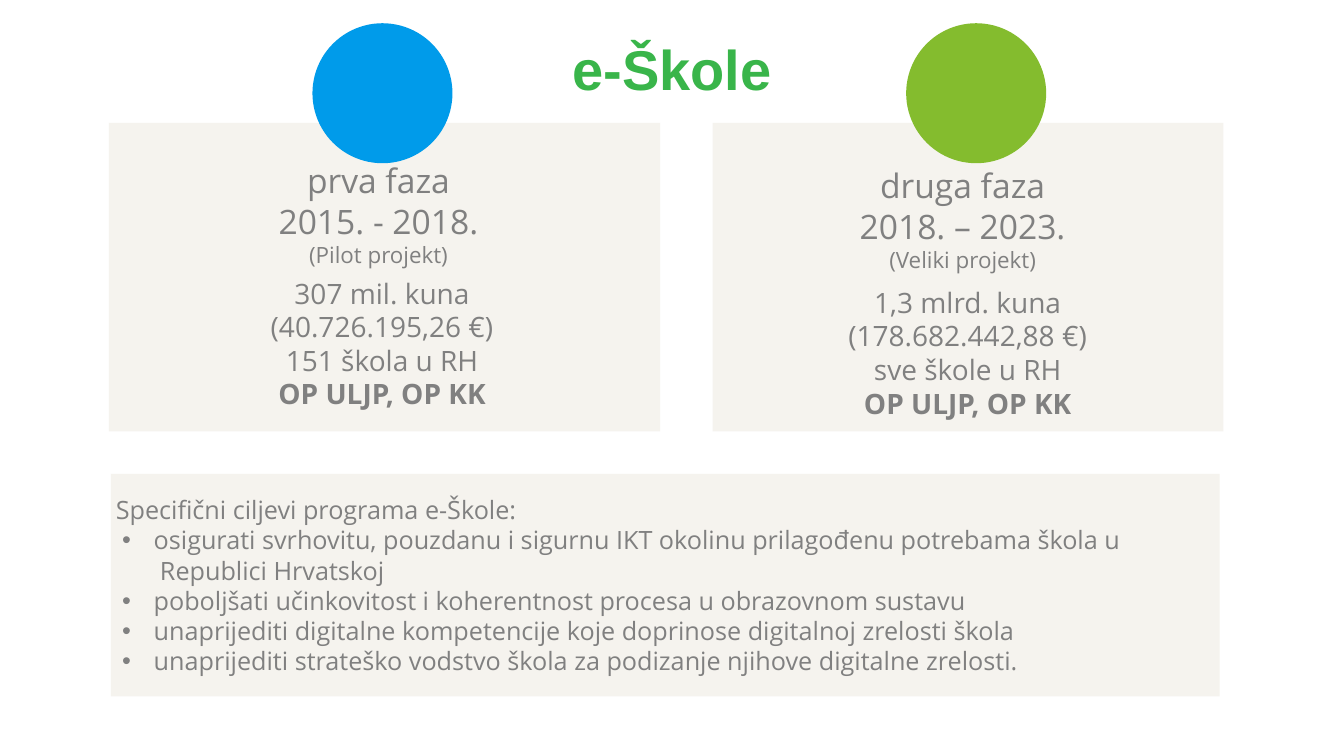
from dataclasses import dataclass

from lxml.etree import SubElement
from pptx import Presentation
from pptx.dml.color import RGBColor
from pptx.enum.shapes import MSO_SHAPE
from pptx.enum.text import MSO_ANCHOR, MSO_AUTO_SIZE, PP_ALIGN
from pptx.oxml.ns import qn
from pptx.shapes.autoshape import Shape
from pptx.slide import Slide
from pptx.text.text import TextFrame
from pptx.util import Pt


@dataclass(frozen=True)
class Theme:
    title_font: str = "Arial"
    body_font: str = "Open Sans"
    title_color: str = "39B54A"
    text_color: str = "808080"
    panel_color: str = "F5F3EE"
    first_phase_color: str = "009BEA"
    second_phase_color: str = "84BC2E"
    title_size: float = 40
    phase_size: float = 24
    figure_size: float = 20
    goal_size: float = 18
    note_size: float = 16


THEME = Theme()


@dataclass(frozen=True)
class Box:
    left: float
    top: float
    width: float
    height: float


@dataclass(frozen=True)
class Line:
    text: str
    size: float
    bold: bool = False
    align: PP_ALIGN = PP_ALIGN.CENTER
    margin: float = 0
    bullet_offset: float = 0


@dataclass(frozen=True)
class Phase:
    color: str
    panel: Box
    circle: Box
    period_box: Box
    period: tuple[str, str, str]
    figures_box: Box
    figures: tuple[str, str, str, str]
    figures_inset: tuple[float, float]


TIGHT_INSET = (3.6, 1.44)
CIRCLE_SIZE = 100

PHASES = (
    Phase(
        THEME.first_phase_color,
        Box(77.8, 87.8, 393.8, 220.3),
        Box(223.2, 16.6, CIRCLE_SIZE, CIRCLE_SIZE),
        Box(97.2, 113, 346.3, 81.4),
        ("prva faza", "2015. - 2018.", "(Pilot projekt)"),
        Box(115.2, 195.8, 315.4, 136.8),
        ("307 mil. kuna", "(40.726.195,26 €)", "151 škola u RH", "OP ULJP, OP KK"),
        TIGHT_INSET,
    ),
    Phase(
        THEME.second_phase_color,
        Box(509, 87.8, 365, 220.3),
        Box(647.3, 16.6, CIRCLE_SIZE, CIRCLE_SIZE),
        Box(526.3, 116.6, 322.6, 81.4),
        ("druga faza", "2018. – 2023.", "(Veliki projekt)"),
        Box(533.5, 200.2, 315.4, 140.4),
        ("1,3 mlrd. kuna", "(178.682.442,88 €)", "sve škole u RH", "OP ULJP, OP KK"),
        (7.2, 3.6),
    ),
)

GOALS_BOX = Box(79.2, 338.4, 792, 159.1)
GOALS_HEADING = "Specifični ciljevi programa e-Škole:"
# Each goal is one bulleted line, with any further lines set under it
GOALS = (
    ("osigurati svrhovitu, pouzdanu i sigurnu IKT okolinu prilagođenu potrebama škola u",
     "Republici Hrvatskoj"),
    ("poboljšati učinkovitost i koherentnost procesa u obrazovnom sustavu",),
    ("unaprijediti digitalne kompetencije koje doprinose digitalnoj zrelosti škola",),
    ("unaprijediti strateško vodstvo škola za podizanje njihove digitalne zrelosti.",),
)


def set_insets(frame: TextFrame, inset: tuple[float, float]) -> None:
    frame.margin_left = frame.margin_right = Pt(inset[0])
    frame.margin_top = frame.margin_bottom = Pt(inset[1])


def write_lines(frame: TextFrame, lines: list[Line], inset: tuple[float, float]) -> None:
    frame.word_wrap = True
    set_insets(frame, inset)
    for number, line in enumerate(lines):
        paragraph = frame.add_paragraph() if number else frame.paragraphs[0]
        paragraph.alignment = line.align
        properties = paragraph._p.get_or_add_pPr()
        if line.margin:
            properties.set("marL", str(Pt(line.margin)))
        if line.bullet_offset:
            properties.set("indent", str(Pt(-line.bullet_offset)))
            SubElement(properties, qn("a:buFont"), typeface=THEME.title_font)
            SubElement(properties, qn("a:buChar"), char="•")
        run = paragraph.add_run()
        run.text = line.text
        run.font.name = THEME.body_font
        run.font.size = Pt(line.size)
        run.font.bold = line.bold
        run.font.color.rgb = RGBColor.from_string(THEME.text_color)


def add_filled(slide: Slide, kind: MSO_SHAPE, box: Box, color: str) -> Shape:
    filled = slide.shapes.add_shape(
        kind, Pt(box.left), Pt(box.top), Pt(box.width), Pt(box.height))
    filled.shadow.inherit = False
    filled.fill.solid()
    filled.fill.fore_color.rgb = RGBColor.from_string(color)
    filled.line.fill.background()
    return filled


def add_text(slide: Slide, box: Box, lines: list[Line], inset: tuple[float, float]) -> None:
    frame = slide.shapes.add_textbox(
        Pt(box.left), Pt(box.top), Pt(box.width), Pt(box.height)).text_frame
    write_lines(frame, lines, inset)
    frame.auto_size = MSO_AUTO_SIZE.SHAPE_TO_FIT_TEXT


def add_title(slide: Slide) -> None:
    title = slide.shapes.title
    title.left, title.top, title.width, title.height = Pt(43.2), Pt(24.5), Pt(873.4), Pt(54.7)
    frame = title.text_frame
    frame.auto_size = MSO_AUTO_SIZE.NONE
    frame.vertical_anchor = MSO_ANCHOR.MIDDLE
    set_insets(frame, TIGHT_INSET)
    paragraph = frame.paragraphs[0]
    paragraph.alignment = PP_ALIGN.CENTER
    paragraph.line_spacing = 0.9
    run = paragraph.add_run()
    run.text = "e-Škole"
    run.font.name = THEME.title_font
    run.font.size = Pt(THEME.title_size)
    run.font.bold = True
    run.font.color.rgb = RGBColor.from_string(THEME.title_color)


def add_phase(slide: Slide, phase: Phase) -> None:
    add_filled(slide, MSO_SHAPE.RECTANGLE, phase.panel, THEME.panel_color)
    name, years, note = phase.period
    period = [Line(name, THEME.phase_size), Line(years, THEME.phase_size),
              Line(note, THEME.note_size)]
    add_text(slide, phase.period_box, period, TIGHT_INSET)
    *figures, programmes = phase.figures
    figure_lines = [Line(figure, THEME.figure_size) for figure in figures]
    figure_lines.append(Line(programmes, THEME.figure_size, bold=True))
    add_text(slide, phase.figures_box, figure_lines, phase.figures_inset)
    add_filled(slide, MSO_SHAPE.OVAL, phase.circle, phase.color)


def add_goals(slide: Slide) -> None:
    panel = add_filled(slide, MSO_SHAPE.RECTANGLE, GOALS_BOX, THEME.panel_color)
    lines = [Line(GOALS_HEADING, THEME.goal_size, align=PP_ALIGN.LEFT)]
    for first, *rest in GOALS:
        lines.append(Line(first, THEME.goal_size, align=PP_ALIGN.LEFT,
                          margin=27, bullet_offset=22.5))
        lines += [Line(text, THEME.goal_size, align=PP_ALIGN.LEFT, margin=31.5)
                  for text in rest]
    panel.text_frame.vertical_anchor = MSO_ANCHOR.MIDDLE
    write_lines(panel.text_frame, lines, TIGHT_INSET)


def main() -> None:
    presentation = Presentation()
    presentation.slide_width, presentation.slide_height = Pt(960), Pt(540)
    title_only = presentation.slide_layouts[5]
    slide = presentation.slides.add_slide(title_only)
    add_title(slide)
    for phase in PHASES:
        add_phase(slide, phase)
    add_goals(slide)
    presentation.save("out.pptx")


if __name__ == "__main__":
    main()
